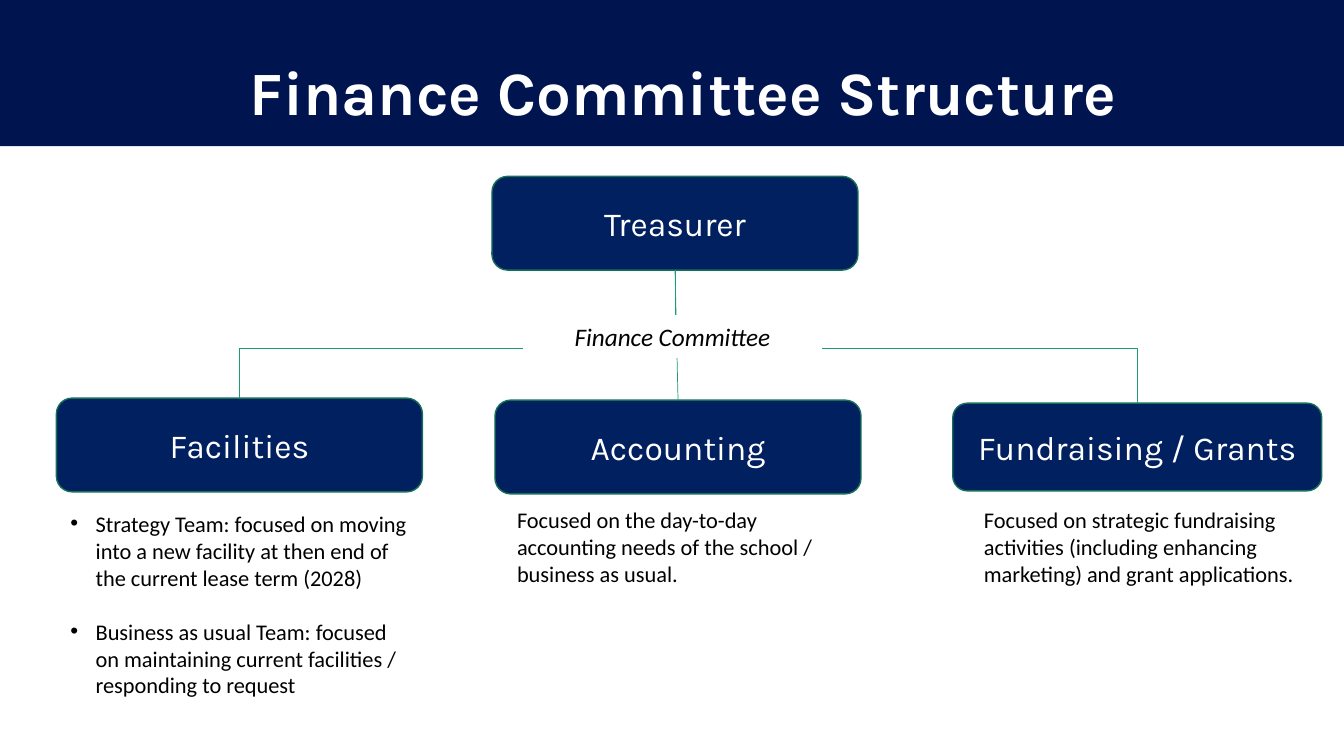
"""Builds the finance committee structure slide."""
from dataclasses import dataclass

from lxml.etree import SubElement
from pptx import Presentation
from pptx.dml.color import RGBColor
from pptx.enum.shapes import MSO_CONNECTOR, MSO_SHAPE
from pptx.enum.text import MSO_ANCHOR, MSO_AUTO_SIZE, PP_ALIGN
from pptx.oxml.ns import qn
from pptx.util import Inches, Pt


@dataclass(frozen=True)
class Theme:
    """Colours, fonts and type sizes of the slide."""
    banner: RGBColor = RGBColor.from_string("00144F")
    box: RGBColor = RGBColor.from_string("002060")
    box_edge: RGBColor = RGBColor.from_string("157259")
    link: RGBColor = RGBColor.from_string("1D9A78")
    white: RGBColor = RGBColor.from_string("FFFFFF")
    black: RGBColor = RGBColor.from_string("000000")
    heading_font: str = "Karla"
    body_font: str = "Calibri"
    title_size: int = 44
    role_size: int = 24
    committee_size: int = 18
    body_size: int = 16


class OrgSlide:
    """Draws the elements of an organisation chart on one slide."""

    def __init__(self, slide, theme):
        """Keep the slide and its theme."""
        self.slide = slide
        self.theme = theme

    def add_text(self, paragraph, text, font, size, color, bold=False, italic=False):
        """Add one formatted run to a paragraph."""
        run = paragraph.add_run()
        run.text = text
        run.font.name = font
        run.font.size = Pt(size)
        run.font.color.rgb = color
        run.font.bold = bold
        run.font.italic = italic

    def panel(self, kind, place, fill, edge=None):
        """Add a filled shape, outlined when an edge colour is given."""
        panel = self.slide.shapes.add_shape(kind, *map(Inches, place))
        panel.shadow.inherit = False
        panel.fill.solid()
        panel.fill.fore_color.rgb = fill
        if edge is None:
            panel.line.fill.background()
        else:
            panel.line.color.rgb = edge
            panel.line.width = Pt(1)
        panel.text_frame.word_wrap = True
        return panel

    def banner(self, place):
        """Add the title band behind everything else."""
        band = self.panel(MSO_SHAPE.RECTANGLE, place, self.theme.banner)
        self.slide.shapes._spTree.insert(2, band._element)

    def title(self, text, place):
        """Place and format the title placeholder."""
        title = self.slide.shapes.title
        title.left, title.top, title.width, title.height = map(Inches, place)
        frame = title.text_frame
        frame.word_wrap = True
        frame.auto_size = MSO_AUTO_SIZE.SHAPE_TO_FIT_TEXT
        frame.vertical_anchor = MSO_ANCHOR.TOP
        paragraph = frame.paragraphs[0]
        paragraph.alignment = PP_ALIGN.CENTER
        paragraph.line_spacing = 0.9
        self.add_text(paragraph, text, self.theme.heading_font,
                      self.theme.title_size, self.theme.white, bold=True)

    def role(self, text, place):
        """Add a rounded box that names a role."""
        theme = self.theme
        role = self.panel(MSO_SHAPE.ROUNDED_RECTANGLE, place, theme.box, theme.box_edge)
        role.text_frame.vertical_anchor = MSO_ANCHOR.MIDDLE
        paragraph = role.text_frame.paragraphs[0]
        paragraph.alignment = PP_ALIGN.CENTER
        self.add_text(paragraph, text, theme.heading_font, theme.role_size, theme.white)
        return role

    def committee(self, text, place):
        """Add the italic label that interrupts the links."""
        theme = self.theme
        label = self.panel(MSO_SHAPE.RECTANGLE, place, theme.white, theme.white)
        label.text_frame.vertical_anchor = MSO_ANCHOR.MIDDLE
        paragraph = label.text_frame.paragraphs[0]
        paragraph.alignment = PP_ALIGN.CENTER
        self.add_text(paragraph, text, theme.body_font, theme.committee_size,
                      theme.black, italic=True)

    def duties(self, texts, place):
        """Add the description of a role, bulleted when it has several parts."""
        theme = self.theme
        duties = self.panel(MSO_SHAPE.RECTANGLE, place, theme.white, theme.white)
        frame = duties.text_frame
        frame.vertical_anchor = MSO_ANCHOR.TOP
        for index, text in enumerate(texts):
            paragraph = frame.add_paragraph() if index else frame.paragraphs[0]
            paragraph.alignment = PP_ALIGN.LEFT
            if index:
                paragraph.space_before = Pt(19.5)
            if len(texts) > 1:
                self.bullet(paragraph)
            self.add_text(paragraph, text, theme.body_font, theme.body_size, theme.black)

    def bullet(self, paragraph):
        """Give a paragraph a hanging bullet."""
        properties = paragraph._p.get_or_add_pPr()
        properties.set("marL", str(Inches(0.25)))
        properties.set("indent", str(-Inches(0.25)))
        SubElement(properties, qn("a:buFont"), typeface="Arial")
        SubElement(properties, qn("a:buChar"), char="•")

    def link(self, upper, lower, kind=MSO_CONNECTOR.STRAIGHT):
        """Join the bottom of one role to the top of another."""
        link = self.slide.shapes.add_connector(kind, 0, 0, 0, 0)
        link.begin_connect(upper, 2)
        link.end_connect(lower, 0)
        link.line.color.rgb = self.theme.link
        link.line.width = Pt(0.5)
        SubElement(link._element.spPr, qn("a:effectLst"))
        return link

    def elbow(self, upper, lower, bend):
        """Join two roles by a link that leaves downwards and turns at bend."""
        link = self.link(upper, lower, MSO_CONNECTOR.ELBOW)
        start_x, start_y = link.begin_x, link.begin_y
        end_x, end_y = link.end_x, link.end_y
        drop, reach = end_y - start_y, abs(end_x - start_x)
        link.left = (start_x + end_x - drop) // 2
        link.top = (start_y + end_y - reach) // 2
        link.width, link.height = drop, reach
        rightward = end_x > start_x
        transform = link._element.spPr.find(qn("a:xfrm"))
        transform.set("rot", str((270 if rightward else 90) * 60000))
        transform.set("flipH", "1" if rightward else "0")
        transform.set("flipV", "0")
        geometry = link._element.spPr.find(qn("a:prstGeom"))
        adjustments = geometry.find(qn("a:avLst"))
        if adjustments is None:
            adjustments = SubElement(geometry, qn("a:avLst"))
        ratio = round((Inches(bend) - start_y) / drop * 100000)
        SubElement(adjustments, qn("a:gd"), name="adj1", fmla=f"val {ratio}")


def main():
    """Build and save the slide."""
    deck = Presentation()
    deck.slide_width, deck.slide_height = Inches(13.33), Inches(7.5)
    chart = OrgSlide(deck.slides.add_slide(deck.slide_layouts[5]), Theme())

    chart.banner((0, 0, 13.33, 1.45))
    chart.title("Finance Committee Structure", (2.13, 0.57, 9.3, 0.77))

    treasurer = chart.role("Treasurer", (4.88, 1.75, 3.63, 0.93))
    fundraising = chart.role("Fundraising / Grants", (9.45, 4, 3.66, 0.87))
    accounting = chart.role("Accounting", (4.91, 3.97, 3.63, 0.93))
    facilities = chart.role("Facilities", (0.56, 3.95, 3.63, 0.93))

    chart.duties(["Focused on the day-to-day accounting needs of the school / "
                  "business as usual."], (5.03, 4.97, 3.27, 1.26))
    chart.duties(["Focused on strategic fundraising activities (including enhancing "
                  "marketing) and grant applications."], (9.66, 4.97, 3.41, 1.07))
    chart.duties(["Strategy Team: focused on moving into a new facility at then end of "
                  "the current lease term (2028)",
                  "Business as usual Team: focused on maintaining current facilities / "
                  "responding to request"], (0.6, 5.01, 3.55, 2.26))

    for branch in (facilities, fundraising):
        chart.elbow(treasurer, branch, 3.46)
    chart.link(treasurer, accounting)
    chart.committee("Finance Committee", (5.19, 3.13, 2.96, 0.42))

    deck.save("out.pptx")


if __name__ == "__main__":
    main()
